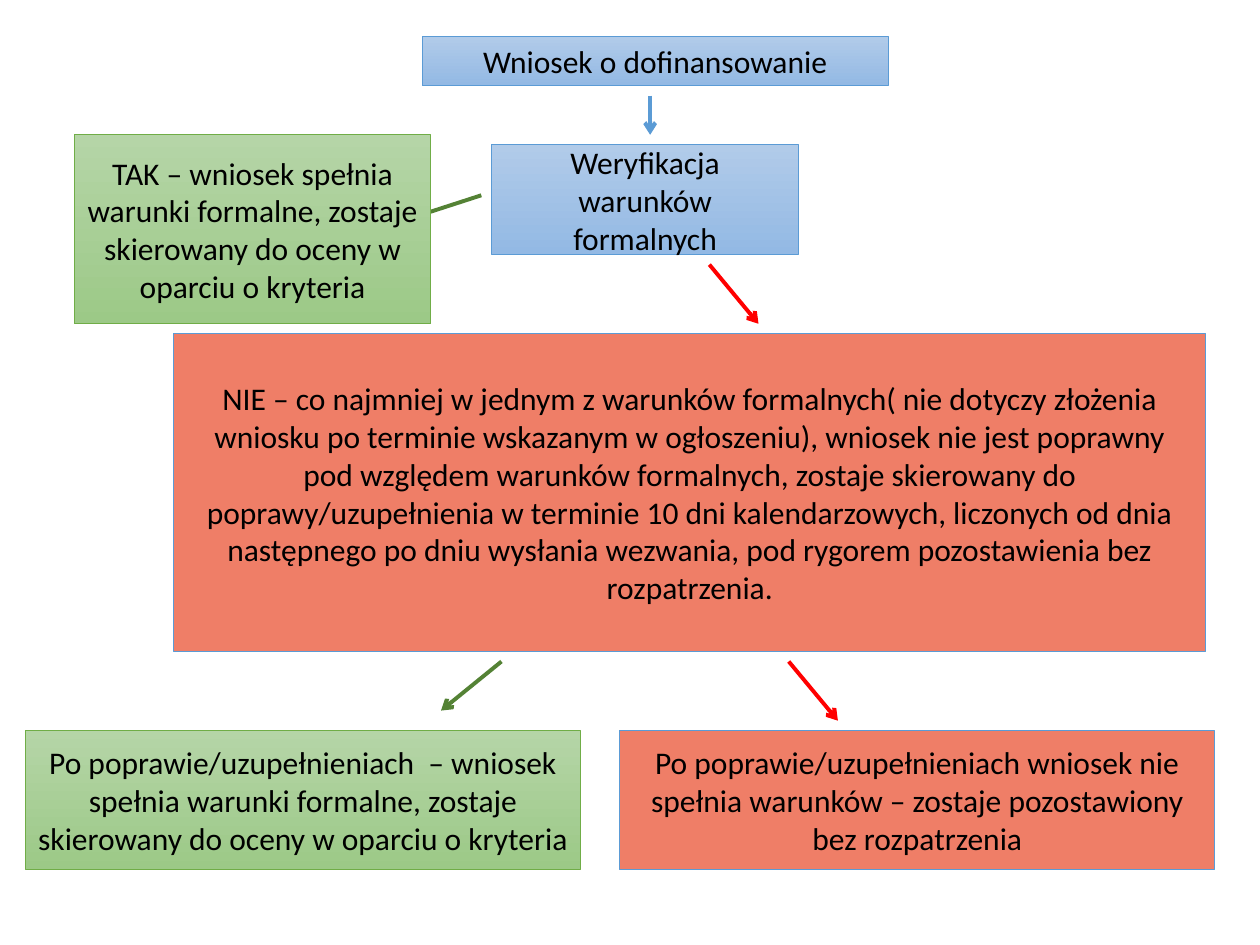
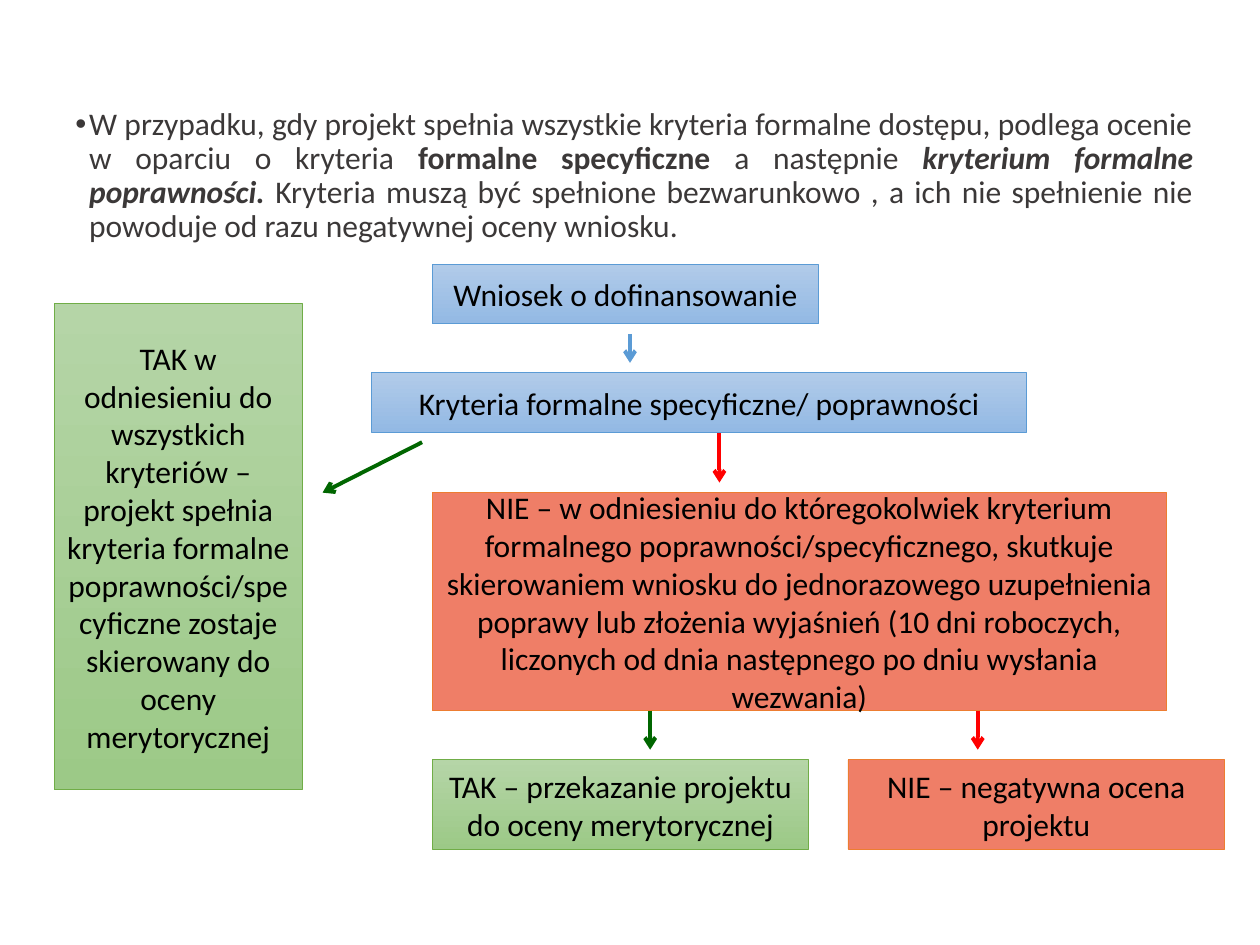
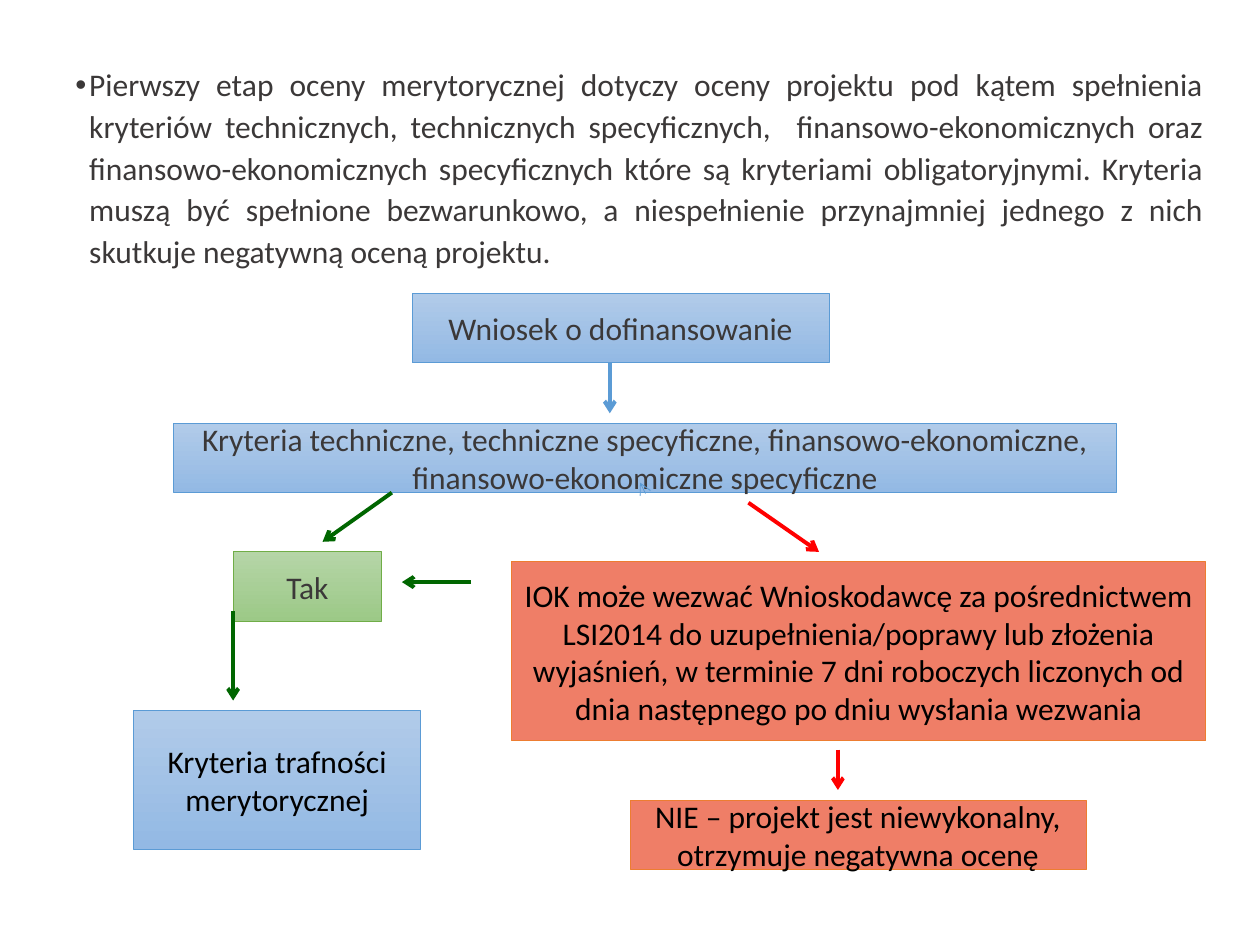
from dataclasses import dataclass

from lxml.etree import SubElement
from pptx import Presentation
from pptx.dml.color import RGBColor
from pptx.enum.shapes import MSO_CONNECTOR, MSO_SHAPE
from pptx.enum.text import MSO_ANCHOR, PP_ALIGN
from pptx.oxml.ns import qn
from pptx.util import Inches, Pt


@dataclass(frozen=True)
class Theme:
    font: str = "Calibri"
    text_size: float = 18
    outline: float = 0.5
    arrow_width: float = 2.25
    black: str = "000000"
    grey: str = "3B3838"
    blue: str = "5B9BD5"
    green: str = "70AD47"
    orange: str = "ED7D31"
    yes_arrow: str = "006600"
    soft_yes_arrow: str = "548235"
    no_arrow: str = "FF0000"
    step_fill: tuple = ("B1CBE9", "93B9E4")
    yes_fill: tuple = ("B5D5A7", "9CC987")
    no_fill: tuple = ("EF7E67",)


THEME = Theme()
STEP = (THEME.step_fill, THEME.blue)
YES = (THEME.yes_fill, THEME.green)
NO = (THEME.no_fill, THEME.orange)
NO_BLUE_EDGE = (THEME.no_fill, THEME.blue)


def rgb(code):
    return RGBColor.from_string(code)


def add_run(paragraph, text, color, bold=False, italic=False):
    run = paragraph.add_run()
    run.text = text
    run.font.name = THEME.font
    run.font.size = Pt(THEME.text_size)
    run.font.color.rgb = rgb(color)
    run.font.bold = bold
    run.font.italic = italic


def add_box(slide, style, left, top, width, height, text, color=THEME.black):
    fills, edge = style
    box = slide.shapes.add_shape(
        MSO_SHAPE.RECTANGLE, Inches(left), Inches(top), Inches(width), Inches(height))
    box.shadow.inherit = False
    if len(fills) == 1:
        box.fill.solid()
        box.fill.fore_color.rgb = rgb(fills[0])
    else:
        box.fill.gradient()
        box.fill.gradient_angle = 270
        for stop, shade in zip(box.fill.gradient_stops, fills):
            stop.color.rgb = rgb(shade)
    box.line.color.rgb = rgb(edge)
    box.line.width = Pt(THEME.outline)
    frame = box.text_frame
    frame.word_wrap = True
    frame.vertical_anchor = MSO_ANCHOR.MIDDLE
    label = frame.paragraphs[0]
    label.alignment = PP_ALIGN.CENTER
    add_run(label, text, color)


def add_arrow(slide, color, x1, y1, x2, y2, width=THEME.arrow_width):
    arrow = slide.shapes.add_connector(
        MSO_CONNECTOR.STRAIGHT, Inches(x1), Inches(y1), Inches(x2), Inches(y2))
    arrow.line.color.rgb = rgb(color)
    arrow.line.width = Pt(width)
    SubElement(arrow.line._get_or_add_ln(), qn("a:tailEnd"), type="arrow")
    SubElement(arrow._element.spPr, qn("a:effectLst"))


def add_intro(slide, width, line_spacing, runs, top_margin=0.05):
    intro = slide.shapes.add_textbox(Inches(0.5), Inches(0.44), Inches(width), Inches(6.38))
    frame = intro.text_frame
    frame.word_wrap = True
    frame.margin_top = Inches(top_margin)
    paragraph = frame.paragraphs[0]
    properties = paragraph._p.get_or_add_pPr()
    properties.set("marL", str(Inches(0.11)))
    properties.set("indent", str(Inches(-0.11)))
    SubElement(properties, qn("a:buFont"), typeface="Arial")
    SubElement(properties, qn("a:buChar"), char="•")
    paragraph.alignment = PP_ALIGN.JUSTIFY
    paragraph.line_spacing = line_spacing
    for text, bold, italic in runs:
        add_run(paragraph, text, THEME.grey, bold, italic)


def build_formal_conditions(slide):
    add_box(slide, STEP, 3.35, 0.29, 3.7, 0.39, "Wniosek o dofinansowanie")
    add_arrow(slide, THEME.blue, 5.16, 0.76, 5.16, 1.07)
    add_box(slide, STEP, 3.9, 1.15, 2.44, 0.87, "Weryfikacja warunków formalnych")
    add_arrow(slide, THEME.soft_yes_arrow, 3.82, 1.55, 3.11, 1.78)
    add_arrow(slide, THEME.no_arrow, 5.63, 2.1, 6.02, 2.57)
    add_box(slide, YES, 0.59, 1.07, 2.83, 1.5,
            "TAK – wniosek spełnia warunki formalne, zostaje skierowany do oceny "
            "w oparciu o kryteria")
    add_box(slide, NO_BLUE_EDGE, 1.38, 2.65, 8.19, 2.52,
            "NIE – co najmniej w jednym z warunków formalnych( nie dotyczy złożenia "
            "wniosku po terminie wskazanym w ogłoszeniu), wniosek nie jest poprawny "
            "pod względem warunków formalnych, zostaje skierowany do "
            "poprawy/uzupełnienia w terminie 10 dni kalendarzowych, liczonych od dnia "
            "następnego po dniu wysłania wezwania, pod rygorem pozostawienia bez "
            "rozpatrzenia.")
    add_arrow(slide, THEME.no_arrow, 6.26, 5.25, 6.65, 5.72)
    add_box(slide, NO_BLUE_EDGE, 4.92, 5.8, 4.72, 1.1,
            "Po poprawie/uzupełnieniach wniosek nie spełnia warunków – zostaje "
            "pozostawiony bez rozpatrzenia")
    add_arrow(slide, THEME.soft_yes_arrow, 3.98, 5.25, 3.5, 5.64)
    add_box(slide, YES, 0.2, 5.8, 4.41, 1.1,
            "Po poprawie/uzupełnieniach  – wniosek spełnia warunki formalne, zostaje "
            "skierowany do oceny w oparciu o kryteria")


def build_specific_criteria(slide):
    add_intro(slide, 9.07, 0.9, [
        ("W przypadku, gdy projekt spełnia wszystkie kryteria formalne dostępu, "
         "podlega ocenie w oparciu o kryteria ", False, False),
        ("formalne specyficzne ", True, False),
        ("a następnie ", False, False),
        ("kryterium formalne poprawności. ", True, True),
        ("Kryteria muszą być spełnione bezwarunkowo , a ich nie spełnienie nie "
         "powoduje od razu negatywnej oceny wniosku.", False, False),
    ], top_margin=0.42)
    add_box(slide, STEP, 3.43, 2.1, 3.07, 0.47, "Wniosek o dofinansowanie")
    add_box(slide, STEP, 2.95, 2.96, 5.2, 0.47, "Kryteria formalne specyficzne/ poprawności")
    add_box(slide, YES, 0.43, 2.41, 1.97, 3.86,
            "TAK w odniesieniu do wszystkich kryteriów – projekt spełnia kryteria "
            "formalne poprawności/specyficzne zostaje skierowany do oceny merytorycznej")
    add_box(slide, NO, 3.43, 3.91, 5.83, 1.73,
            "NIE – w odniesieniu do któregokolwiek kryterium formalnego "
            "poprawności/specyficznego, skutkuje skierowaniem wniosku do jednorazowego "
            "uzupełnienia poprawy lub złożenia wyjaśnień (10 dni roboczych, liczonych "
            "od dnia następnego po dniu wysłania wezwania)")
    add_box(slide, NO, 6.73, 6.03, 2.99, 0.71, "NIE – negatywna ocena projektu")
    add_box(slide, YES, 3.43, 6.03, 2.99, 0.71,
            "TAK – przekazanie projektu do oceny merytorycznej")
    add_arrow(slide, THEME.blue, 5, 2.65, 5, 2.88)
    add_arrow(slide, THEME.no_arrow, 5.71, 3.44, 5.71, 3.83)
    add_arrow(slide, THEME.yes_arrow, 3.35, 3.51, 2.56, 3.91)
    add_arrow(slide, THEME.yes_arrow, 5.16, 5.64, 5.16, 5.95)
    add_arrow(slide, THEME.no_arrow, 7.76, 5.64, 7.76, 5.95)


def build_merit_assessment(slide):
    add_intro(slide, 9.15, 1.1, [
        ("Pierwszy etap oceny merytorycznej dotyczy oceny projektu pod kątem "
         "spełnienia kryteriów technicznych, technicznych specyficznych,  "
         "finansowo-ekonomicznych oraz finansowo-ekonomicznych specyficznych które są "
         "kryteriami obligatoryjnymi. Kryteria muszą być spełnione bezwarunkowo, a "
         "niespełnienie przynajmniej jednego z nich skutkuje negatywną oceną projektu.",
         False, False),
    ])
    add_box(slide, STEP, 3.27, 2.33, 3.31, 0.55, "Wniosek o dofinansowanie", THEME.grey)
    add_arrow(slide, THEME.blue, 4.84, 2.88, 4.84, 3.28)
    add_box(slide, STEP, 1.38, 3.36, 7.48, 0.55,
            "Kryteria techniczne, techniczne specyficzne, finansowo-ekonomiczne, "
            "finansowo-ekonomiczne specyficzne", THEME.grey)
    add_arrow(slide, THEME.blue, 5.12, 3.91, 5.08, 3.83, THEME.outline)
    add_arrow(slide, THEME.no_arrow, 5.94, 3.99, 6.5, 4.38)
    add_box(slide, NO, 4.06, 4.46, 5.51, 1.42,
            "IOK może wezwać Wnioskodawcę za pośrednictwem LSI2014 do "
            "uzupełnienia/poprawy lub złożenia wyjaśnień, w terminie 7 dni roboczych "
            "liczonych od dnia następnego po dniu wysłania wezwania")
    add_arrow(slide, THEME.yes_arrow, 3.11, 3.91, 2.56, 4.3)
    add_box(slide, YES, 1.85, 4.38, 1.18, 0.55, "Tak", THEME.grey)
    add_arrow(slide, THEME.yes_arrow, 1.85, 4.85, 1.85, 5.56)
    add_arrow(slide, THEME.yes_arrow, 3.74, 4.62, 3.19, 4.62)
    add_arrow(slide, THEME.no_arrow, 6.65, 5.95, 6.65, 6.27)
    add_box(slide, STEP, 1.06, 5.64, 2.28, 1.1, "Kryteria trafności merytorycznej")
    add_box(slide, NO, 5, 6.35, 3.62, 0.55,
            "NIE – projekt jest niewykonalny, otrzymuje negatywna ocenę")


def main():
    deck = Presentation()
    deck.slide_width = Inches(10)
    deck.slide_height = Inches(7.5)
    blank = deck.slide_layouts[6]
    for build in (build_formal_conditions, build_specific_criteria, build_merit_assessment):
        build(deck.slides.add_slide(blank))
    deck.save("out.pptx")


if __name__ == "__main__":
    main()
